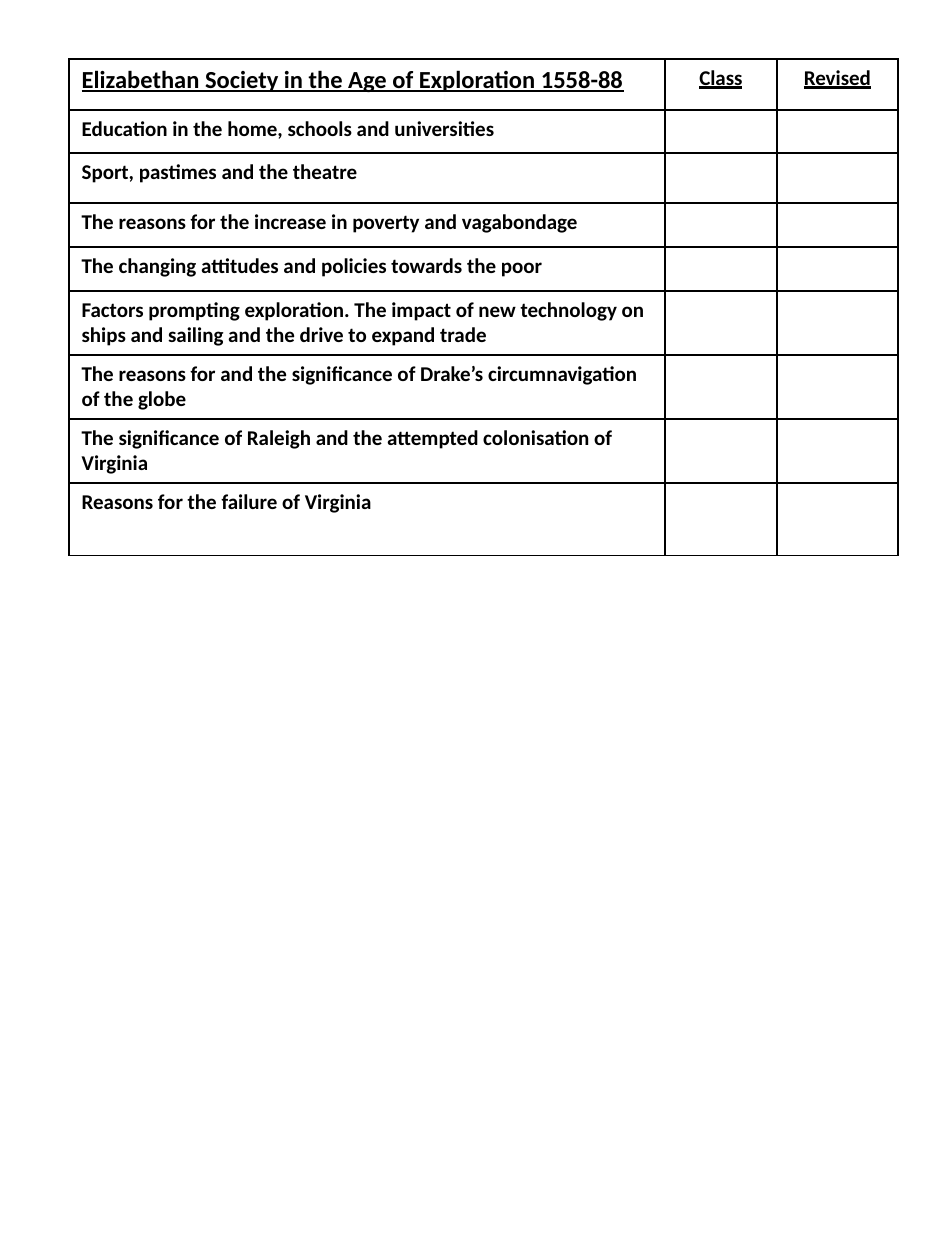
from lxml import etree
from pptx import Presentation
from pptx.dml.color import RGBColor
from pptx.enum.text import PP_ALIGN
from pptx.oxml.ns import qn
from pptx.util import Pt

PX = 914400 // 126
BLACK = RGBColor(0, 0, 0)
CENTER = PP_ALIGN.CENTER
LEFT = PP_ALIGN.LEFT

HEADS = ["Elizabethan Society in the Age of Exploration 1558-88", "Class", "Revised"]
TOPICS = [
    "Education in the home, schools and universities",
    "Sport, pastimes and the theatre",
    "The reasons for the increase in poverty and vagabondage",
    "The changing attitudes and policies towards the poor",
    "Factors prompting exploration. The impact of new technology on ships "
    "and sailing and the drive to expand trade",
    "The reasons for and the significance of Drake’s circumnavigation of the globe",
    "The significance of Raleigh and the attempted colonisation of Virginia",
    "Reasons for the failure of Virginia",
]
WIDTHS = [596, 112, 121]
HEIGHTS = [51, 43, 50, 44, 44, 64, 64, 64, 73]


def add_borders(cell):
    props = cell._tc.get_or_add_tcPr()
    for i, side in enumerate(("lnL", "lnR", "lnT", "lnB")):
        line = etree.Element(qn("a:" + side), w=str(Pt(1)))
        fill = etree.SubElement(line, qn("a:solidFill"))
        etree.SubElement(fill, qn("a:srgbClr"), val=str(BLACK))
        props.insert(i, line)


deck = Presentation()
deck.slide_width = 945 * PX
deck.slide_height = 1260 * PX
slide = deck.slides.add_slide(deck.slide_layouts[6])

rows = [HEADS] + [[topic, "", ""] for topic in TOPICS]
frame = slide.shapes.add_table(
    len(rows), len(WIDTHS), 69 * PX, 59 * PX, sum(WIDTHS) * PX, sum(HEIGHTS) * PX)
table = frame.table
table.first_row = table.horz_banding = False
for col, width in zip(table.columns, WIDTHS):
    col.width = width * PX
for row, height in zip(table.rows, HEIGHTS):
    row.height = height * PX

for r, texts in enumerate(rows):
    for c, text in enumerate(texts):
        cell = table.cell(r, c)
        cell.fill.background()
        add_borders(cell)
        para = cell.text_frame.paragraphs[0]
        para.alignment = CENTER if c else LEFT
        size = Pt(14 if r == c == 0 else 12)
        if not text:
            # An empty cell takes its line height from the paragraph end mark
            end = para._p.get_or_add_endParaRPr()
            end.set("sz", str(int(size.pt * 100)))
            continue
        run = para.add_run()
        run.text = text
        look = {"name": "Calibri", "size": size, "bold": True, "underline": r == 0}
        for key, value in look.items():
            setattr(run.font, key, value)
        run.font.color.rgb = BLACK

deck.save("out.pptx")
